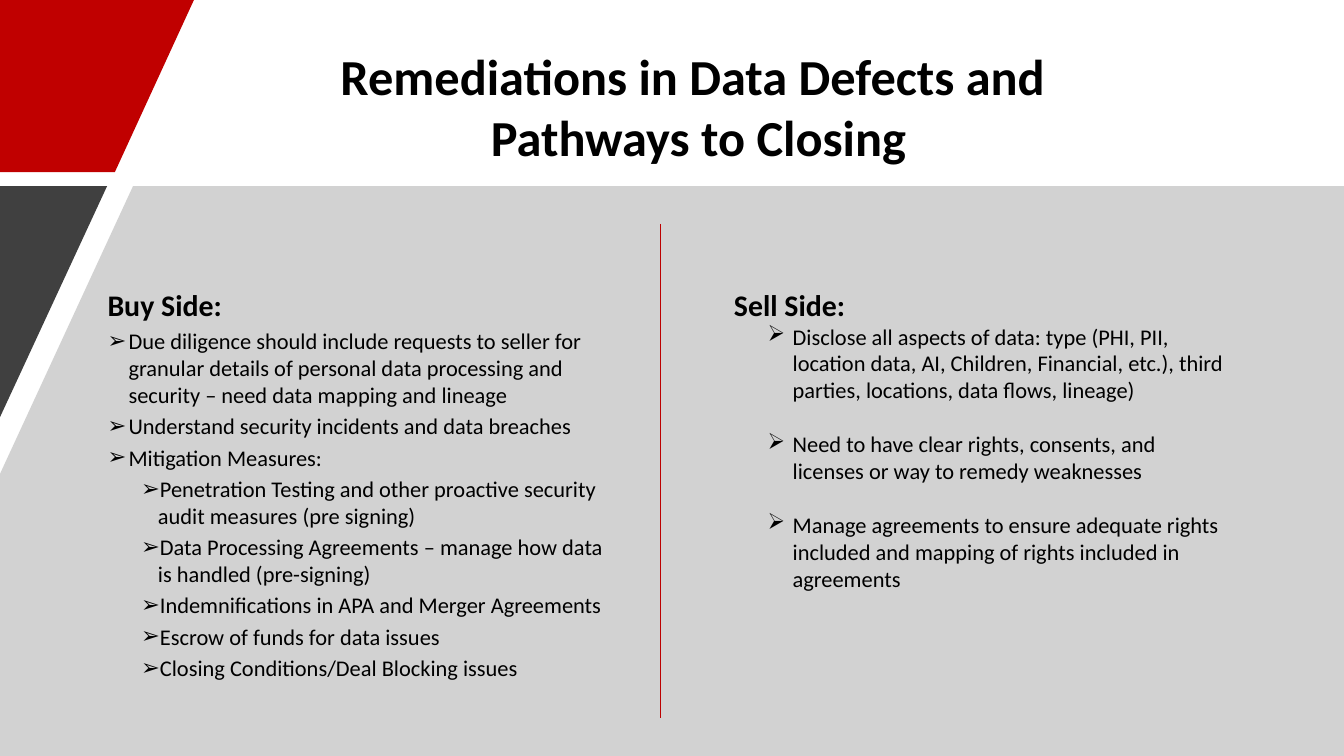
from dataclasses import dataclass

from lxml import etree
from pptx import Presentation
from pptx.dml.color import RGBColor
from pptx.enum.shapes import MSO_CONNECTOR
from pptx.enum.text import MSO_ANCHOR, MSO_AUTO_SIZE, PP_ALIGN
from pptx.oxml.ns import qn
from pptx.util import Pt

STRAIGHT = MSO_CONNECTOR.STRAIGHT
MIDDLE = MSO_ANCHOR.MIDDLE
TOP = MSO_ANCHOR.TOP
NO_AUTOFIT = MSO_AUTO_SIZE.NONE
CENTER = PP_ALIGN.CENTER
LEFT = PP_ALIGN.LEFT

EMU_PER_PX = 9525
WIDTH, HEIGHT = 1920, 1080
BAND_TOP = 266


@dataclass(frozen=True)
class Theme:
    font: str = "Calibri"
    text: str = "000000"
    red: str = "C00000"
    divider: str = "BC0000"
    panel: str = "A6A6A6"
    dark: str = "404040"
    title_size: int = 54
    heading_size: int = 32
    body_size: int = 24
    bullet: str = "➢"


@dataclass(frozen=True)
class Style:
    size: int
    bold: bool = False
    level: int = 0
    margin: int = 0
    hanging: int = 0
    space_before: float = 0
    bullet: str = ""


@dataclass(frozen=True)
class Line:
    text: str
    style: Style


@dataclass(frozen=True)
class Polygon:
    points: tuple
    color: str
    opacity: int = 100


THEME = Theme()
BODY = THEME.body_size
BULLET = THEME.bullet

TITLE = Style(THEME.title_size, bold=True)
BUY_HEADING = Style(THEME.heading_size, bold=True, level=1, margin=48)
BUY_ITEM = Style(BODY, level=1, margin=78, hanging=30, space_before=4.8, bullet=BULLET)
BUY_SUBITEM = Style(BODY, level=2, margin=120, hanging=24, space_before=4.8, bullet=BULLET)
SELL_HEADING = Style(THEME.heading_size, bold=True)
SELL_FIRST = Style(BODY, level=1, margin=84, hanging=36, bullet=BULLET)
SELL_ITEM = Style(BODY, level=1, margin=84, hanging=36, space_before=29, bullet=BULLET)

POLYGONS = (
    Polygon(((0, 0), (277, 0), (164, 246), (0, 246)), THEME.red),
    Polygon(((190, BAND_TOP), (WIDTH, BAND_TOP), (WIDTH, HEIGHT), (0, HEIGHT), (0, 677)),
            THEME.panel, opacity=50),
    Polygon(((0, BAND_TOP), (153, BAND_TOP), (0, 596)), THEME.dark),
)

TITLE_LINES = (Line("Remediations in Data Defects and \vPathways to Closing", TITLE),)

BUY_LINES = (
    Line("Buy Side:", BUY_HEADING),
    Line("Due diligence should include requests to seller for granular details of "
         "personal data processing and security – need data mapping and lineage", BUY_ITEM),
    Line("Understand security incidents and data breaches", BUY_ITEM),
    Line("Mitigation Measures:", BUY_ITEM),
    Line("Penetration Testing and other proactive security audit measures (pre signing)",
         BUY_SUBITEM),
    Line("Data Processing Agreements – manage how data is handled (pre-signing)", BUY_SUBITEM),
    Line("Indemnifications in APA and Merger Agreements", BUY_SUBITEM),
    Line("Escrow of funds for data issues", BUY_SUBITEM),
    Line("Closing Conditions/Deal Blocking issues", BUY_SUBITEM),
)

SELL_LINES = (
    Line("Sell Side:", SELL_HEADING),
    Line("Disclose all aspects of data: type (PHI, PII, location data, AI, Children, "
         "Financial, etc.), third parties, locations, data flows, lineage)", SELL_FIRST),
    Line("Need to have clear rights, consents, and licenses or way to remedy weaknesses",
         SELL_ITEM),
    Line("Manage agreements to ensure adequate rights included and mapping of rights "
         "included in agreements", SELL_ITEM),
)


def px(value: int) -> int:
    return value * EMU_PER_PX


def place(shape, left: int, top: int, width: int, height: int) -> None:
    shape.left, shape.top = px(left), px(top)
    shape.width, shape.height = px(width), px(height)


def draw_polygon(slide, polygon: Polygon) -> None:
    builder = slide.shapes.build_freeform(*polygon.points[0], scale=EMU_PER_PX)
    builder.add_line_segments(polygon.points[1:], close=True)
    shape = builder.convert_to_shape()
    shape.shadow.inherit = False
    shape.line.fill.background()
    shape.fill.solid()
    shape.fill.fore_color.rgb = RGBColor.from_string(polygon.color)
    if polygon.opacity < 100:
        color = shape.fill._xPr.find(".//" + qn("a:srgbClr"))
        etree.SubElement(color, qn("a:alpha"), val=str(polygon.opacity * 1000))


def draw_divider(slide, x: int, top: int, bottom: int) -> None:
    connector = slide.shapes.add_connector(STRAIGHT, px(x), px(top), px(x), px(bottom))
    connector.line.color.rgb = RGBColor.from_string(THEME.divider)
    connector.line.width = Pt(0.75)
    etree.SubElement(connector._element.spPr, qn("a:effectLst"))


def format_paragraph(paragraph, style: Style, alignment) -> None:
    paragraph.alignment = alignment
    paragraph.level = style.level
    paragraph.line_spacing = 1.0
    paragraph.space_before = Pt(style.space_before)
    properties = paragraph._p.get_or_add_pPr()
    properties.set("marL", str(px(style.margin)))
    properties.set("indent", str(px(-style.hanging)))
    if style.bullet:
        etree.SubElement(properties, qn("a:buChar"), char=style.bullet)
    else:
        etree.SubElement(properties, qn("a:buNone"))
    for run in paragraph.runs:
        run.font.name = THEME.font
        run.font.size = Pt(style.size)
        run.font.bold = style.bold
        run.font.color.rgb = RGBColor.from_string(THEME.text)


def write_lines(shape, lines: tuple, alignment=LEFT, anchor=TOP) -> None:
    frame = shape.text_frame
    frame.word_wrap = True
    frame.auto_size = NO_AUTOFIT
    frame.vertical_anchor = anchor
    for index, line in enumerate(lines):
        paragraph = frame.add_paragraph() if index else frame.paragraphs[0]
        paragraph.text = line.text
        format_paragraph(paragraph, line.style, alignment)


def main() -> None:
    presentation = Presentation()
    presentation.slide_width, presentation.slide_height = px(WIDTH), px(HEIGHT)
    slide = presentation.slides.add_slide(presentation.slide_layouts[1])

    for polygon in POLYGONS:
        draw_polygon(slide, polygon)
    draw_divider(slide, 943, 320, 1026)

    title, buy_side = slide.shapes.title, slide.placeholders[1]
    place(title, 260, 58, 1476, 187)
    write_lines(title, TITLE_LINES, CENTER, MIDDLE)
    place(buy_side, 96, 405, 787, 622)
    write_lines(buy_side, BUY_LINES)

    sell_side = slide.shapes.add_textbox(px(1039), px(405), px(726), px(488))
    write_lines(sell_side, SELL_LINES)
    for shape in (title, buy_side):
        slide.shapes._spTree.append(shape._element)

    presentation.save("out.pptx")


if __name__ == "__main__":
    main()
